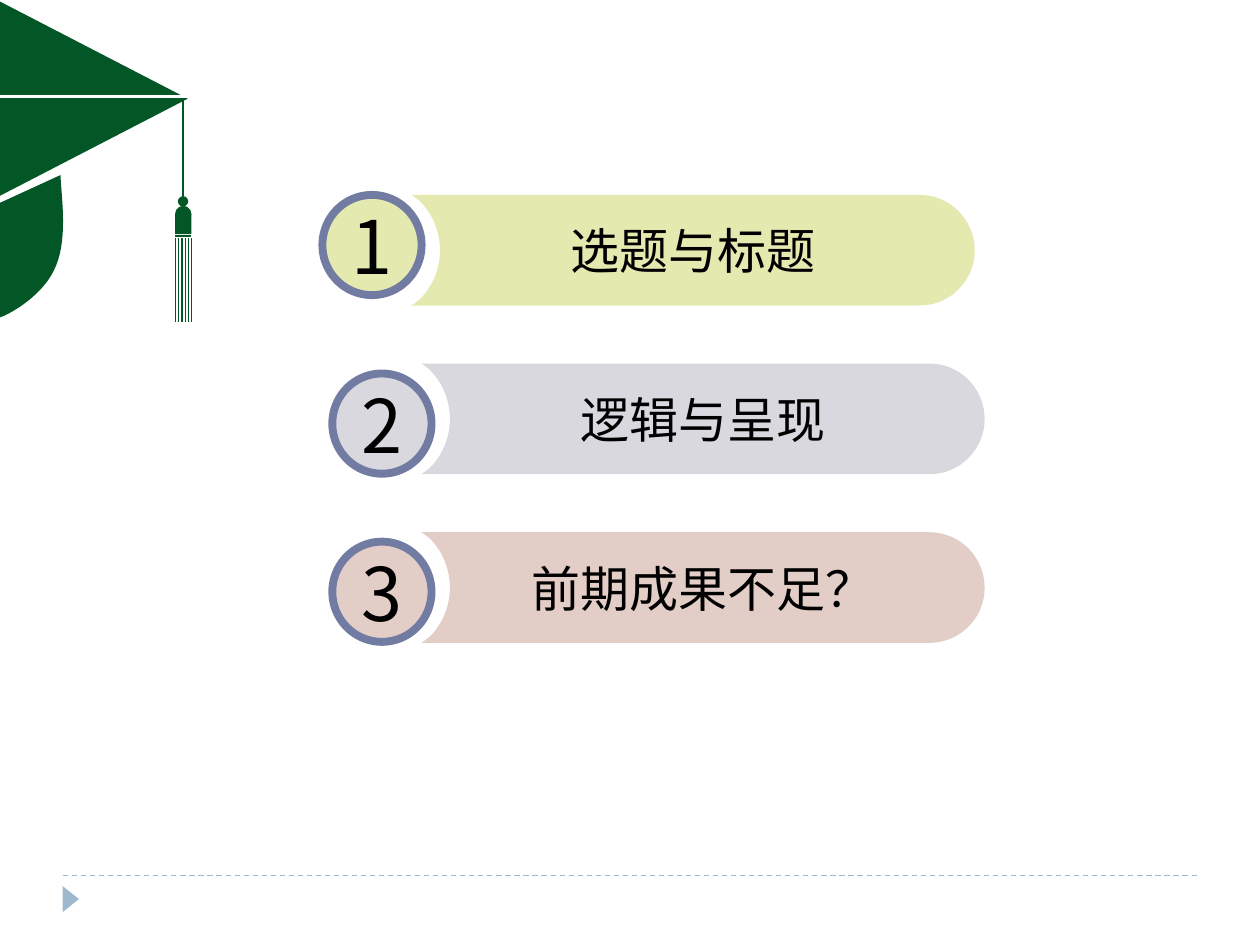
import pptx
import pptx.dml.color
import pptx.enum.dml
import pptx.enum.shapes
import pptx.enum.text
import pptx.oxml.ns
import pptx.util
from lxml import etree

Cm = pptx.util.Cm
RGBColor = pptx.dml.color.RGBColor
MSO_SHAPE = pptx.enum.shapes.MSO_SHAPE
qn = pptx.oxml.ns.qn

GREEN = RGBColor(0x03, 0x57, 0x26)
WHITE = RGBColor(0xFF, 0xFF, 0xFF)
BLACK = RGBColor(0x00, 0x00, 0x00)
FOOTER_BLUE = RGBColor(0x9F, 0xB8, 0xCD)
RING_BLUE = RGBColor(0x72, 0x7C, 0xA3)
LIME = RGBColor(0xE4, 0xE9, 0xAF)
GREY = RGBColor(0xD8, 0xD8, 0xDE)
ROSE = RGBColor(0xE3, 0xCE, 0xC7)

CJK_FONT = "Noto Sans CJK SC"
BAR_TOP, BAR_STEP = 3.93, 3.4
ITEMS = [
    ("1", "选题与标题", LIME, 6.5, 3.93),
    ("2", "逻辑与呈现", GREY, 6.7, 7.53),
    ("3", "前期成果不足？", ROSE, 6.7, 10.92),
]
BAR_OUTLINE = [
    [(0, 0)],
    [(10.24, 0)],
    [(10.85, 0), (11.35, 0.5), (11.35, 1.12)],
    [(11.35, 1.73), (10.85, 2.23), (10.24, 2.23)],
    [(0, 2.23)],
    [(0.16, 2.11)],
    [(0.41, 1.86), (0.57, 1.51), (0.57, 1.12)],
    [(0.57, 0.72), (0.41, 0.37), (0.16, 0.12)],
]
CAP_OUTLINE = [
    [(1.22, 3.53)],
    [(1.24, 3.99), (1.37, 4.8), (1.12, 5.38)],
    [(0.89, 5.94), (0.23, 6.32), (0, 6.4)],
    [(0, 4.09)],
]


def apply(obj, values):
    for name, value in values.items():
        setattr(obj, name, value)


def paint(s, fill):
    s.shadow.inherit = False
    s.fill.solid()
    s.fill.fore_color.rgb = fill
    s.line.fill.background()


def add_preset(sp, kind, x, y, w, h, fill, rotation=0):
    s = sp.add_shape(kind, Cm(x), Cm(y), Cm(w), Cm(h))
    paint(s, fill)
    s.rotation = rotation
    return s


def add_outline(sp, x, y, segments, fill):
    points = [(Cm(x + dx), Cm(y + dy)) for seg in segments for dx, dy in seg]
    builder = sp.build_freeform(*points[0])
    builder.add_line_segments(points[1:], close=True)
    s = builder.convert_to_shape()
    paint(s, fill)
    nodes = iter(s._element.findall(".//" + qn("a:lnTo")))
    for seg in segments[1:]:
        first, *others = [next(nodes) for _ in seg]
        if others:
            curve = etree.Element(qn("a:cubicBezTo"))
            first.addprevious(curve)
            for node in (first, *others):
                curve.append(node[0])
                node.getparent().remove(node)
    return s


def add_line(sp, x1, y1, x2, y2, color, width=0.75):
    s = sp.add_connector(
        pptx.enum.shapes.MSO_CONNECTOR.STRAIGHT, Cm(x1), Cm(y1), Cm(x2), Cm(y2)
    )
    s.line.color.rgb = color
    s.line.width = pptx.util.Pt(width)
    etree.SubElement(s._element.spPr, qn("a:effectLst"))
    return s


def add_text(s, text, size, font):
    tf = s.text_frame
    margins = dict.fromkeys(
        ("margin_left", "margin_top", "margin_right", "margin_bottom"), 0
    )
    apply(tf, {
        **margins,
        "word_wrap": True,
        "vertical_anchor": pptx.enum.text.MSO_ANCHOR.MIDDLE,
    })
    p = tf.paragraphs[0]
    p.alignment = pptx.enum.text.PP_ALIGN.CENTER
    r = p.add_run()
    r.text = text
    apply(r.font, {"size": pptx.util.Pt(size), "name": font})
    r.font.color.rgb = BLACK
    ea = etree.SubElement(r.font._element, qn("a:ea"))
    ea.set("typeface", CJK_FONT)


def add_bar(sp, x, y, text, fill):
    s = add_outline(sp, x, y, BAR_OUTLINE, fill)
    add_text(s, text, 28, "Cabin")


def add_badge(sp, x, y, number, fill):
    s = add_preset(sp, MSO_SHAPE.OVAL, x, y, 2, 2.02, fill)
    s.line.color.rgb = RING_BLUE
    s.line.width = pptx.util.Pt(4.5)
    add_text(s, number, 42.2, CJK_FONT)


def add_footer(sp):
    s = add_line(sp, 1.27, 17.65, 24.13, 17.65, FOOTER_BLUE)
    s.line.dash_style = pptx.enum.dml.MSO_LINE.DASH
    add_preset(sp, MSO_SHAPE.ISOSCELES_TRIANGLE, 1.16, 17.96, 0.53, 0.33,
               FOOTER_BLUE, 90)


def add_cap(sp):
    add_outline(sp, 0, 0, CAP_OUTLINE, GREEN)
    add_preset(sp, MSO_SHAPE.ISOSCELES_TRIANGLE, -0.06, 0.1, 3.91, 3.78, GREEN, 90)
    add_line(sp, 0, 1.95, 4.55, 1.95, WHITE, 1.5)


def add_tassel(sp):
    s = add_line(sp, 3.69, 2.01, 3.69, 4.06, GREEN)
    etree.SubElement(s.line._get_or_add_ln(), qn("a:tailEnd")).set("type", "oval")
    add_preset(sp, MSO_SHAPE.OVAL, 3.53, 4.15, 0.33, 0.33, GREEN)
    add_preset(sp, MSO_SHAPE.RECTANGLE, 3.53, 4.32, 0.33, 0.4, GREEN)
    for x, width in ((3.54, 0.75), (3.6, 0.75), (3.67, 1.5),
                     (3.74, 0.75), (3.8, 0.75), (3.86, 0.75)):
        add_line(sp, x, 4.8, x, 6.5, GREEN, width)
    for y, width in ((4.76, 0.75), (4.71, 0.25)):
        add_line(sp, 3.53, y, 3.86, y, GREEN, width)


def main():
    prs = pptx.Presentation()
    apply(prs, {"slide_width": Cm(25.4), "slide_height": Cm(19.05)})
    sp = prs.slides.add_slide(prs.slide_layouts[6]).shapes
    add_footer(sp)
    hat = sp.add_group_shape().shapes
    add_cap(hat)
    add_tassel(hat)
    for i, (number, text, fill, x, badge_y) in enumerate(ITEMS):
        add_badge(sp, x, badge_y, number, fill)
        add_bar(sp, x + 1.8, BAR_TOP + i * BAR_STEP, text, fill)
    prs.save("out.pptx")


if __name__ == "__main__":
    main()
